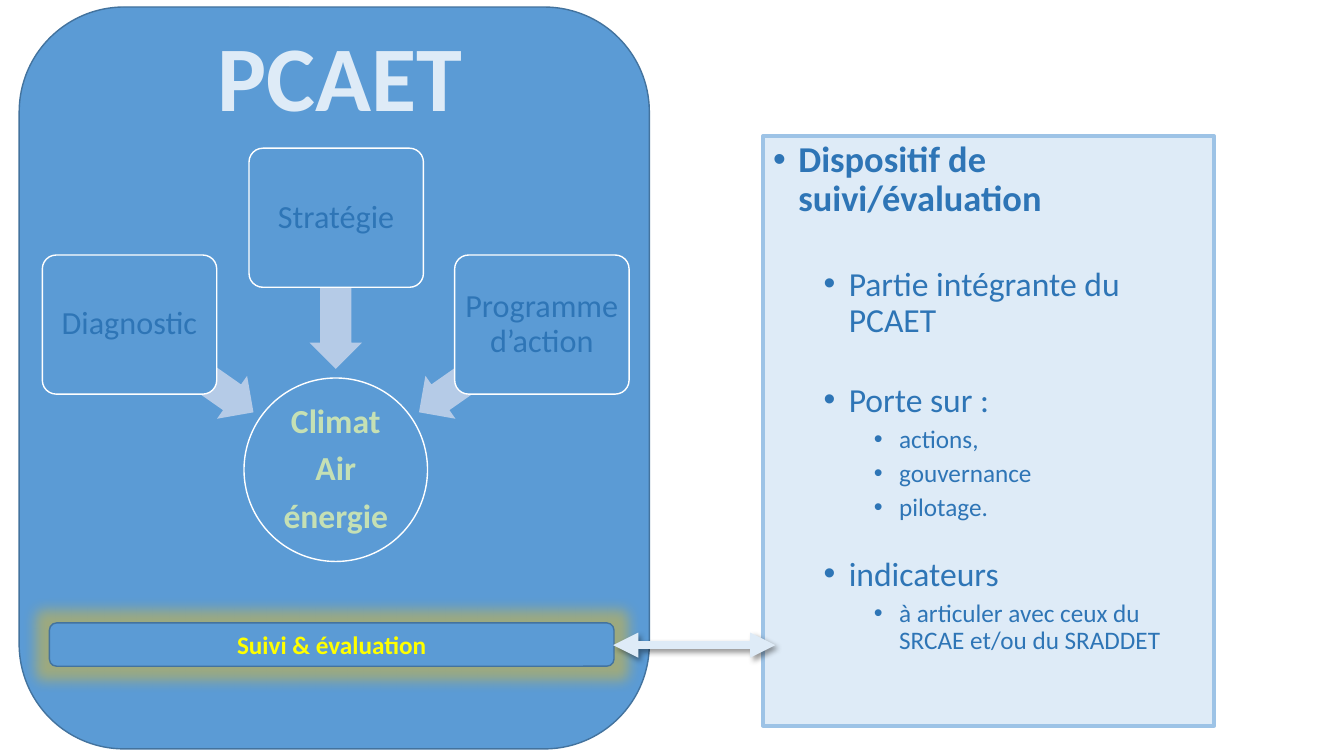
from lxml.etree import SubElement
from pptx import Presentation
from pptx.dml.color import RGBColor
from pptx.enum.shapes import MSO_CONNECTOR, MSO_SHAPE
from pptx.enum.text import MSO_ANCHOR, MSO_AUTO_SIZE, PP_ALIGN
from pptx.oxml.ns import qn
from pptx.util import Emu, Pt

BLUE, EDGE, PALE, DEEP = "5B9BD5", "43739E", "DEEBF7", "2E75B6"
WHITE, GREEN, YELLOW = "FFFFFF", "C5E0B4", "FFFF00"

# label, left, top, left of its arrow, top of its arrow, arrow rotation
STEPS = [
    ("Diagnostic", 42, 253, 115, 340, 215),
    ("Stratégie", 247, 147, 258, 265, 270),
    ("Programme d’action", 451, 253, 402, 340, 325),
]

# text, level, space before in points
MONITORING = [
    ("Dispositif de suivi/évaluation", 0, 10),
    ("Partie intégrante du PCAET", 1, 34),
    ("Porte sur :", 1, 31),
    ("actions,", 2, 5),
    ("gouvernance", 2, 5),
    ("pilotage.", 2, 5),
    ("indicateurs", 1, 25),
    ("à articuler avec ceux du SRCAE et/ou du SRADDET", 2, 5),
]
LEVEL_SIZES = (26, 24, 18)


def px(length):
    """Convert px, at 100 to the inch, into EMU."""
    return Emu(length * 9144)


def rgb(color):
    return RGBColor.from_string(color)


def add_box(slide, kind, bounds, fill, line=None, line_width=1):
    box = slide.shapes.add_shape(kind, *map(px, bounds))
    box.shadow.inherit = False
    box.fill.solid()
    box.fill.fore_color.rgb = rgb(fill)
    if line:
        box.line.color.rgb = rgb(line)
        box.line.width = Pt(line_width)
    else:
        box.line.fill.background()
    return box


def style_paragraph(paragraph, size, color, bold=False, align=PP_ALIGN.CENTER):
    paragraph.alignment = align
    for run in paragraph.runs:
        run.font.name = "Calibri"
        run.font.size = Pt(size)
        run.font.bold = bold
        run.font.color.rgb = rgb(color)


def write_centred(box, text, size, color, bold=False, inset=5, spacing=0.9):
    frame = box.text_frame
    frame.text = text
    frame.word_wrap = True
    frame.vertical_anchor = MSO_ANCHOR.MIDDLE
    frame.margin_left = frame.margin_right = px(inset)
    frame.margin_top = frame.margin_bottom = px(inset)
    for paragraph in frame.paragraphs:
        style_paragraph(paragraph, size, color, bold)
        paragraph.line_spacing = spacing
        paragraph.space_after = Pt(8)


def add_effect(shape, effect, color, alpha, **settings):
    """Add a glow or an outer shadow, with alpha in percent."""
    properties = shape.element.spPr
    effects = properties.find(qn("a:effectLst"))
    if effects is None:
        effects = SubElement(properties, qn("a:effectLst"))
    node = SubElement(effects, qn(f"a:{effect}"))
    for name, value in settings.items():
        node.set(name, str(value))
    tint = SubElement(node, qn("a:srgbClr"), val=color)
    SubElement(tint, qn("a:alpha"), val=str(alpha * 1000))


def add_title(slide, text):
    title = slide.shapes.add_textbox(px(205), px(14), px(265), px(121))
    title.text_frame.text = text
    title.text_frame.word_wrap = False
    title.text_frame.auto_size = MSO_AUTO_SIZE.SHAPE_TO_FIT_TEXT
    style_paragraph(title.text_frame.paragraphs[0], 66, PALE, True)


def add_step_arrow(slide, left, top, rotation):
    arrow = add_box(slide, MSO_SHAPE.LEFT_ARROW, (left, top, 150, 52), "B5CBE7")
    arrow.adjustments[0], arrow.adjustments[1] = 0.6, 0.5
    arrow.rotation = rotation


def add_step(slide, label, left, top):
    step = add_box(slide, MSO_SHAPE.ROUNDED_RECTANGLE, (left, top, 173, 138), BLUE, WHITE)
    step.adjustments[0] = 0.1
    write_centred(step, label, 23, DEEP)


def add_bullet(paragraph, level):
    paragraph.level = level
    properties = paragraph._p.get_or_add_pPr()
    properties.set("marL", str(px(25 + 50 * level)))
    properties.set("indent", str(px(-25)))
    SubElement(properties, qn("a:buFont"), typeface="Arial")
    SubElement(properties, qn("a:buChar"), char="•")


def add_monitoring_panel(slide):
    panel = add_box(slide, MSO_SHAPE.RECTANGLE, (757, 135, 447, 585), PALE, "9DC3E6", 3)
    frame = panel.text_frame
    frame.text = "\n".join(text for text, _, _ in MONITORING)
    frame.word_wrap = True
    frame.vertical_anchor = MSO_ANCHOR.TOP
    for paragraph, (_, level, gap) in zip(frame.paragraphs, MONITORING):
        style_paragraph(paragraph, LEVEL_SIZES[level], DEEP, level == 0, PP_ALIGN.LEFT)
        paragraph.line_spacing = 0.9
        paragraph.space_before = Pt(gap)
        add_bullet(paragraph, level)


def add_double_arrow(slide, start, end, y):
    link = slide.shapes.add_connector(MSO_CONNECTOR.STRAIGHT, px(start), px(y), px(end), px(y))
    link.line.color.rgb = rgb(PALE)
    link.line.width = Pt(6)
    for side in ("headEnd", "tailEnd"):
        SubElement(link.line._get_or_add_ln(), qn(f"a:{side}"), type="triangle")
    add_effect(link, "outerShdw", "000000", 40, blurRad=Pt(4), dist=Pt(3), dir=45 * 60000)


def main():
    presentation = Presentation()
    presentation.slide_width, presentation.slide_height = px(1333), px(750)
    slide = presentation.slides.add_slide(presentation.slide_layouts[6])

    add_box(slide, MSO_SHAPE.ROUNDED_RECTANGLE, (19, 7, 625, 736), BLUE, EDGE)
    themes = add_box(slide, MSO_SHAPE.OVAL, (242, 375, 182, 182), BLUE, WHITE)
    write_centred(themes, "Climat\nAir\nénergie", 24, GREEN, True, inset=2)

    for label, left, top, arrow_left, arrow_top, rotation in STEPS:
        add_step_arrow(slide, arrow_left, arrow_top, rotation)
        add_step(slide, label, left, top)

    follow_up = add_box(slide, MSO_SHAPE.ROUNDED_RECTANGLE, (49, 618, 560, 43), BLUE, EDGE)
    write_centred(follow_up, "Suivi & évaluation", 18, YELLOW, True, spacing=1.0)
    add_effect(follow_up, "glow", "FFC000", 40, rad=Pt(18))

    add_title(slide, "PCAET")
    add_monitoring_panel(slide)
    add_double_arrow(slide, 608, 769, 640)
    presentation.save("out.pptx")


if __name__ == "__main__":
    main()
